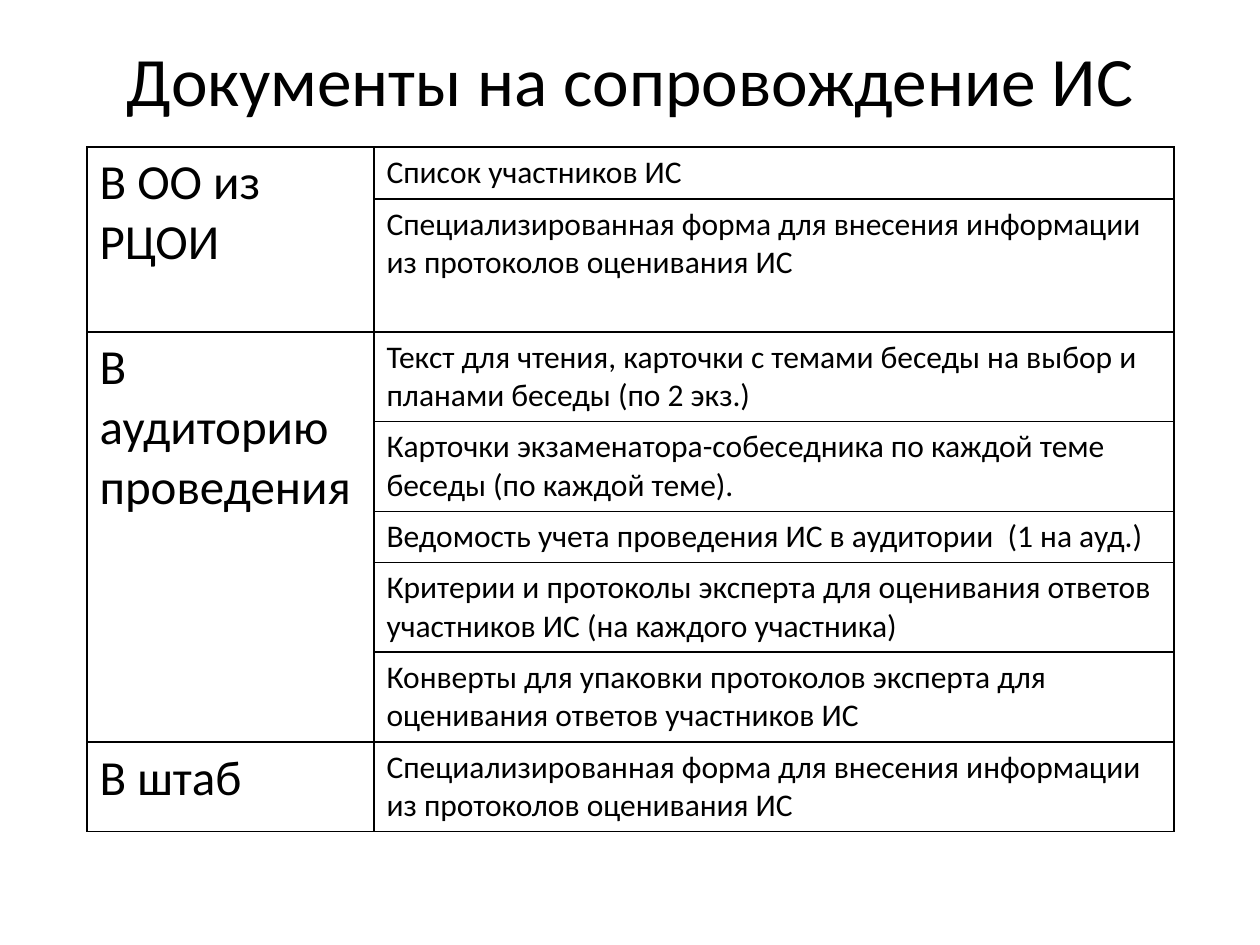
from dataclasses import dataclass

from lxml import etree
from pptx import Presentation
from pptx import util as u
from pptx.dml.color import RGBColor
from pptx.enum import text
from pptx.oxml import ns

PX = u.Inches(1) // 126


@dataclass(frozen=True)
class Theme:
    font: str = "Calibri"
    ink: str = "000000"
    title: float = 39.6
    group: float = 28
    item: float = 18
    border: float = 1


THEME = Theme()
TITLE = "Документы на сопровождение ИС"
FORM = "Специализированная форма для внесения информации из протоколов оценивания ИС"

# Each place of delivery with its documents and their row heights in px
GROUPS = [
    ("В ОО из РЦОИ", [
        ("Список участников ИС", 52),
        (FORM, 133),
    ]),
    ("В аудиторию проведения", [
        ("Текст для чтения, карточки с темами беседы на выбор и планами беседы (по 2 экз.)", 89),
        ("Карточки экзаменатора-собеседника по каждой теме беседы (по каждой теме).", 90),
        ("Ведомость учета проведения ИС в аудитории  (1 на ауд.)", 51),
        ("Критерии и протоколы эксперта для оценивания ответов участников ИС "
         "(на каждого участника)", 89),
        ("Конверты для упаковки протоколов эксперта для оценивания ответов участников ИС", 90),
    ]),
    ("В штаб", [(FORM, 89)]),
]
COLUMNS = (287, 800)
LEFT, TITLE_TOP, TITLE_HEIGHT, TABLE_TOP = 87, 50, 69, 147


def px(n):
    return u.Emu(n * PX)


def write(tf, content, size, align=text.PP_ALIGN.LEFT, spacing=None):
    p = tf.paragraphs[0]
    p.alignment = align
    p.line_spacing = spacing
    r = p.add_run()
    r.text = content
    r.font.name = THEME.font
    r.font.size = u.Pt(size)
    r.font.bold = False
    r.font.color.rgb = RGBColor.from_string(THEME.ink)


def add_title(slide):
    sp = slide.shapes.title
    sp.left, sp.top = px(LEFT), px(TITLE_TOP)
    sp.width, sp.height = px(sum(COLUMNS)), px(TITLE_HEIGHT)
    tf = sp.text_frame
    tf.auto_size = text.MSO_AUTO_SIZE.NONE
    tf.vertical_anchor = text.MSO_ANCHOR.MIDDLE
    write(tf, TITLE, THEME.title, align=text.PP_ALIGN.CENTER, spacing=0.9)


def style_cell(cell):
    """Leave the cell unfilled with a thin border on all four sides."""
    tc_pr = cell._tc.get_or_add_tcPr()
    for side in ("a:lnL", "a:lnR", "a:lnT", "a:lnB"):
        ln = etree.SubElement(tc_pr, ns.qn(side), w=str(u.Pt(THEME.border)))
        fill = etree.SubElement(ln, ns.qn("a:solidFill"))
        etree.SubElement(fill, ns.qn("a:srgbClr"), val=THEME.ink)
    cell.fill.background()


def add_documents_table(slide):
    heights = [height for _, items in GROUPS for _, height in items]
    table = slide.shapes.add_table(
        len(heights), len(COLUMNS), px(LEFT), px(TABLE_TOP),
        px(sum(COLUMNS)), px(sum(heights))).table
    table.first_row = table.horz_banding = False
    for column, width in zip(table.columns, COLUMNS):
        column.width = px(width)
    for row, height in zip(table.rows, heights):
        row.height = px(height)
    for cell in table.iter_cells():
        style_cell(cell)

    first = 0
    for group, items in GROUPS:
        head = table.cell(first, 0)
        if len(items) > 1:
            head.merge(table.cell(first + len(items) - 1, 0))
        write(head.text_frame, group, THEME.group)
        for i, (item, _) in enumerate(items, first):
            write(table.cell(i, 1).text_frame, item, THEME.item)
        first += len(items)


def main():
    prs = Presentation()
    prs.slide_width, prs.slide_height = u.Inches(10), u.Inches(7.5)
    slide = prs.slides.add_slide(prs.slide_layouts[5])
    add_title(slide)
    add_documents_table(slide)
    prs.save("out.pptx")


if __name__ == "__main__":
    main()
